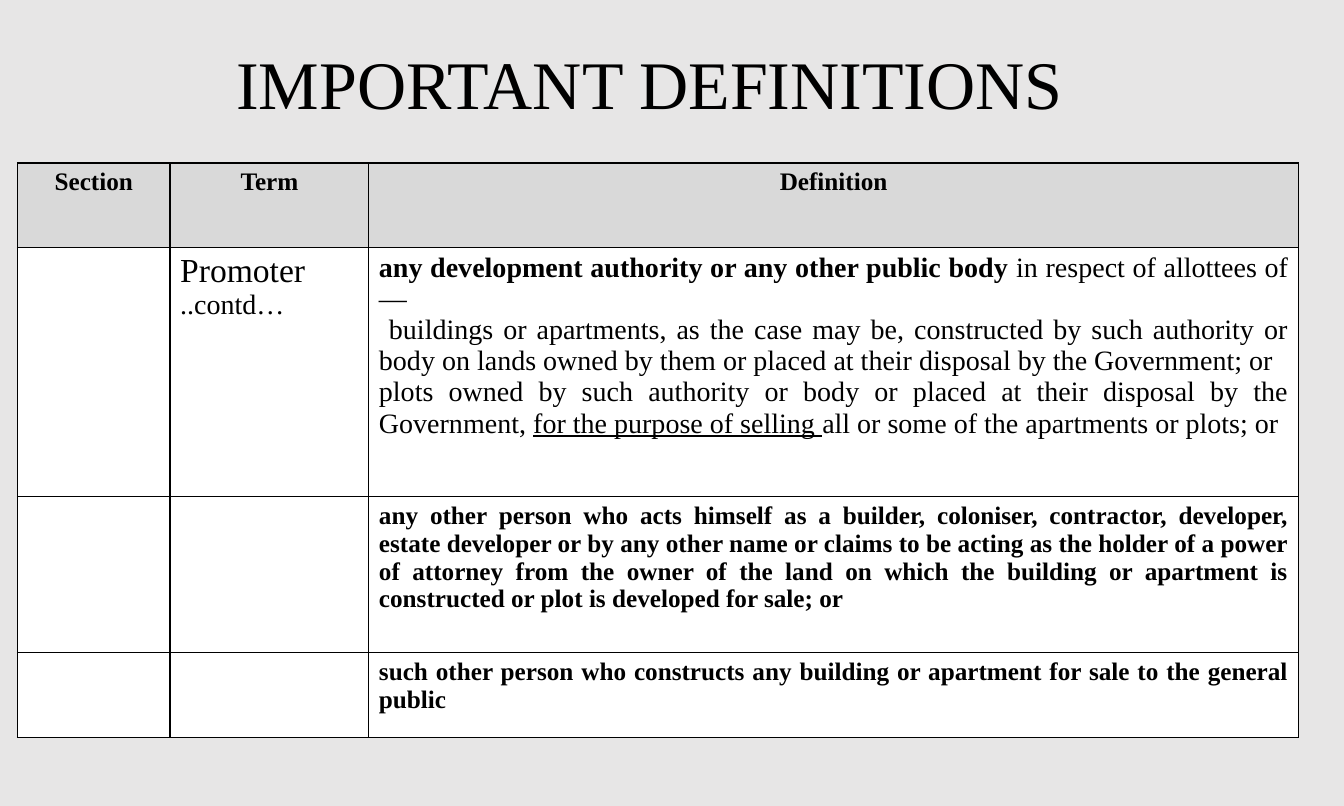
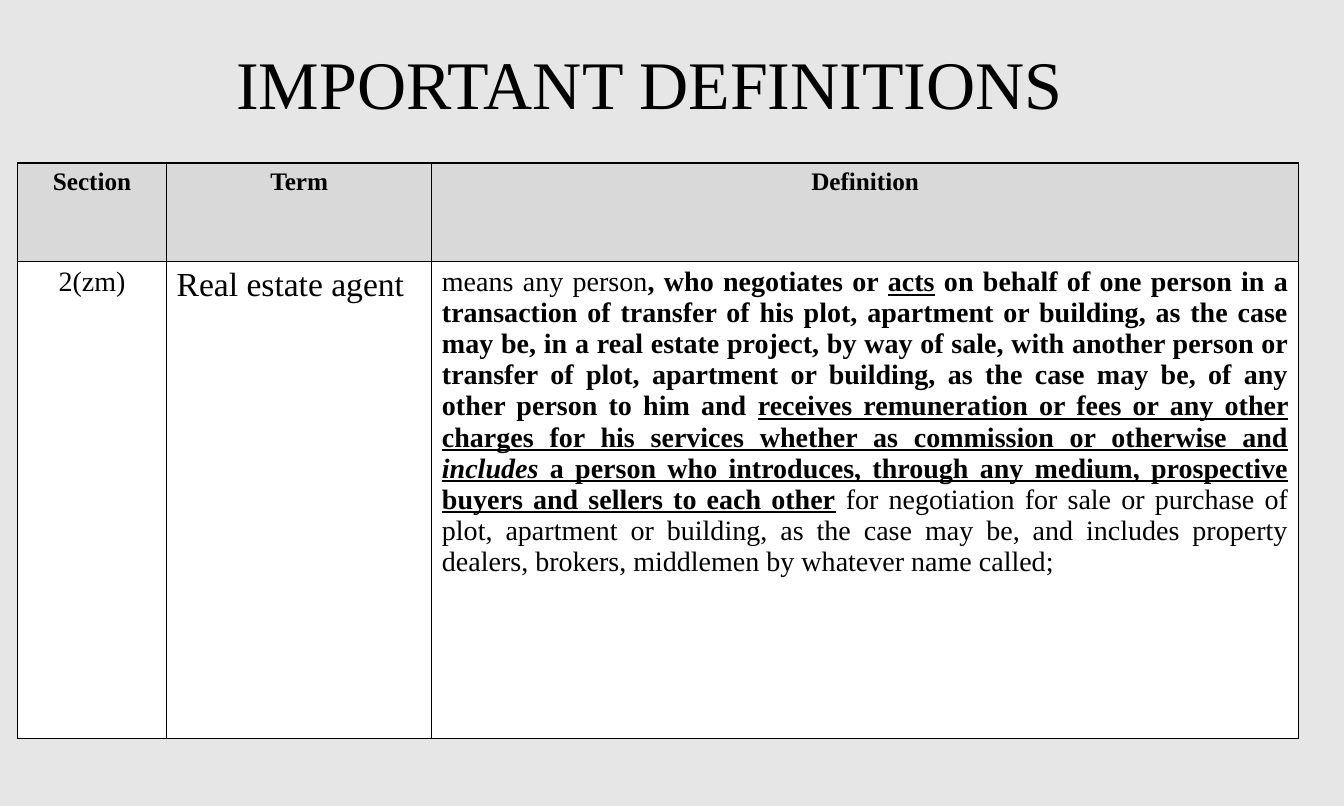
from dataclasses import dataclass

from lxml import etree
from pptx import Presentation
from pptx import util as u
from pptx.dml import color
from pptx.enum import text
from pptx.oxml import ns

LEFT, MID, JUST = text.PP_ALIGN.LEFT, text.PP_ALIGN.CENTER, text.PP_ALIGN.JUSTIFY


@dataclass(frozen=True)
class Theme:
    font: str = "Times New Roman"
    back: str = "E7E6E6"
    head: str = "D9D9D9"
    body: str = "FFFFFF"
    ink: str = "000000"
    title: float = 48.6
    term: int = 24
    large: int = 20
    small: int = 18
    rule: int = 1


LOOK = Theme()
HEADS = ("Section", "Term", "Definition")
FLAGS = {"b": "bold", "i": "italic", "u": "underline"}


def paint(fill, shade):
    fill.solid()
    fill.fore_color.rgb = color.RGBColor.from_string(shade)


def add_run(para, words, size, marks=""):
    run = para.add_run()
    run.text = words
    style = {"name": LOOK.font, "size": u.Pt(size)}
    style.update({name: key in marks for key, name in FLAGS.items()})
    for name, value in style.items():
        setattr(run.font, name, value)
    run.font.color.rgb = color.RGBColor.from_string(LOOK.ink)


def para(*runs, align=JUST):
    return align, runs


def write(frame, paras):
    for index, (align, runs) in enumerate(paras):
        item = frame.add_paragraph() if index else frame.paragraphs[0]
        item.alignment = align
        for run in runs:
            add_run(item, *run)


def add_rules(cell):
    props = cell._tc.get_or_add_tcPr()
    for side in "LRTB":
        line = etree.SubElement(props, ns.qn(f"a:ln{side}"), w=str(u.Pt(LOOK.rule)))
        fill = etree.SubElement(line, ns.qn("a:solidFill"))
        etree.SubElement(fill, ns.qn("a:srgbClr"), val=LOOK.ink)


def add_title(slide):
    box = slide.shapes.add_textbox(u.Pt(12.5), u.Pt(37), u.Pt(915), u.Pt(55.5))
    frame = box.text_frame
    for name, value in {"word_wrap": True, "vertical_anchor": text.MSO_ANCHOR.BOTTOM}.items():
        setattr(frame, name, value)
    write(frame, [para(("IMPORTANT DEFINITIONS ", LOOK.title), align=MID)])
    frame.paragraphs[0].line_spacing = 0.9


def add_grid(slide, cols, rows, body):
    heads = [[para((name, LOOK.small, "b"), align=MID)] for name in HEADS]
    grid = slide.shapes.add_table(len(rows), len(cols), u.Pt(12.5), u.Pt(116.5),
                                  u.Pt(sum(cols)), u.Pt(sum(rows))).table
    grid.first_row = grid.horz_banding = False
    for col, width in zip(grid.columns, cols):
        col.width = u.Pt(width)
    for index, (row, height, cells) in enumerate(zip(grid.rows, rows, [heads, *body])):
        row.height = u.Pt(height)
        for cell, paras in zip(row.cells, cells):
            add_rules(cell)
            paint(cell.fill, LOOK.body if index else LOOK.head)
            write(cell.text_frame, paras)


def add_page(deck, cols, rows, body):
    slide = deck.slides.add_slide(deck.slide_layouts[6])
    paint(slide.background.fill, LOOK.back)
    add_title(slide)
    add_grid(slide, cols, rows, body)


def promoter():
    size = LOOK.large
    term = [para(("Promoter", LOOK.term), align=LEFT), para(("..contd…", size), align=LEFT)]
    public = [
        para(("any development authority or any other public body ", size, "b"),
             ("in respect of allottees of—", size)),
        para((" buildings or apartments, as the case may be, constructed by such authority "
              "or body on lands owned by them or placed at their disposal by the "
              "Government; or", size)),
        para(("plots owned by such authority or body or placed at their disposal by the "
              "Government, ", size),
             ("for the purpose of selling ", size, "u"),
             ("all or some of the apartments or plots; or", size)),
    ]
    builder = [para(("any other person who acts himself as a builder, coloniser, contractor, "
                     "developer, estate developer or by any other name or claims to be acting "
                     "as the holder of a power of attorney from the owner of the land on which "
                     "the building or apartment is constructed or plot is developed for sale; "
                     "or", LOOK.small, "b"))]
    other = [para(("such other person who constructs any building or apartment for sale to "
                   "the general public", LOOK.small, "b"))]
    return [[[], term, public], [[], [], builder], [[], [], other]]


def agent():
    size = LOOK.large
    means = para(
        ("means any person", size),
        (", who negotiates or ", size, "b"),
        ("acts", size, "bu"),
        (" on behalf of one person in a transaction of transfer of his plot, apartment or "
         "building, as the case may be, in a real estate project, by way of sale, with another "
         "person or transfer of plot, apartment or building, as the case may be, of any other "
         "person to him and ", size, "b"),
        ("receives remuneration or fees or any other charges for his services whether as "
         "commission or otherwise and ", size, "bu"),
        ("includes", size, "biu"),
        (" a person who introduces, through any medium, prospective buyers and sellers to "
         "each other", size, "bu"),
        (" ", size, "b"),
        ("for negotiation for sale or purchase of plot, apartment or building, as the case may "
         "be, and includes property dealers, brokers, middlemen by whatever name called;", size),
    )
    return [[[para(("2(zm)", size), align=MID)],
             [para(("Real estate agent", LOOK.term), align=LEFT)],
             [means]]]


def main():
    deck = Presentation()
    deck.slide_width, deck.slide_height = u.Pt(960), u.Pt(576)
    add_page(deck, (109, 142, 664), (60.5, 178, 111.5, 60.5), promoter())
    add_page(deck, (106.5, 189.5, 619), (70.5, 340.5), agent())
    deck.save("out.pptx")


if __name__ == "__main__":
    main()
